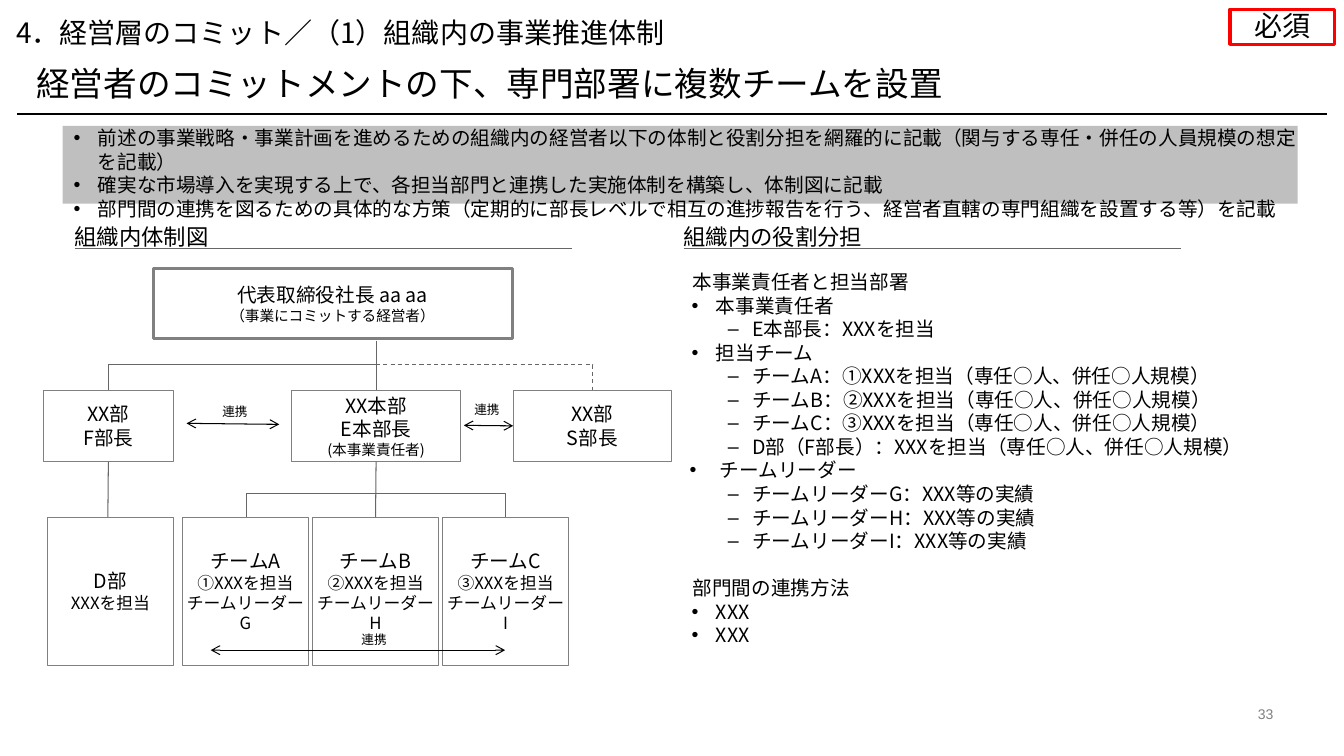
from lxml import etree
from pptx import Presentation
from pptx.dml.color import RGBColor
from pptx.enum.dml import MSO_LINE
from pptx.enum.shapes import MSO_CONNECTOR, MSO_SHAPE
from pptx.enum.text import MSO_ANCHOR, PP_ALIGN
from pptx.oxml.ns import qn
from pptx.util import Pt

SCALE = 9144  # EMU per px, 100 px to the inch
FONT = "Noto Sans CJK JP"
BLACK, GRAY, WIRE, RED, BAND = "000000", "808080", "666666", "FF0000", "BFBFBF"
RECTANGLE, STRAIGHT = MSO_SHAPE.RECTANGLE, MSO_CONNECTOR.STRAIGHT
LEFT, CENTER, RIGHT = PP_ALIGN.LEFT, PP_ALIGN.CENTER, PP_ALIGN.RIGHT
TOP, MIDDLE, BOTTOM = MSO_ANCHOR.TOP, MSO_ANCHOR.MIDDLE, MSO_ANCHOR.BOTTOM
DASH = MSO_LINE.DASH
TOP_SIDE, LEFT_SIDE, BOTTOM_SIDE = 0, 1, 2

# Paragraph styles: bullet, left margin and first-line indent in px
PLAIN = (None, 0, 0)
HEADING = (None, 12, 0)
DOT = ("•", 35, -24)
WIDE_DOT = ("•", 39, -30)
SUB = ("–", 71, -24)


def px(length):
    return round(length * SCALE)


def color(value):
    return RGBColor.from_string(value)


class SlideBuilder:
    def __init__(self, slide, font_name):
        self.shapes = slide.shapes
        self.font_name = font_name

    def fill_text(self, shape, lines, align=LEFT, anchor=TOP, inset=(0, 0),
                  font_color=BLACK, font_name=None, spacing=1.2):
        """Fill a shape with (text, size, style, space before) lines; the last two are optional."""
        frame = shape.text_frame
        frame.word_wrap = True
        frame.vertical_anchor = anchor
        frame.margin_left = frame.margin_right = px(inset[0])
        frame.margin_top = frame.margin_bottom = px(inset[1])
        for index, (text, size, *rest) in enumerate(lines):
            style, space_before = (*rest, *(PLAIN, 0)[len(rest):])
            paragraph = frame.add_paragraph() if index else frame.paragraphs[0]
            paragraph.text = text
            paragraph.alignment = align
            paragraph.line_spacing = Pt(round(size * spacing, 1))
            if space_before:
                paragraph.space_before = Pt(space_before)
            self.indent(paragraph, *style)
            self.set_font(paragraph, size, font_color, font_name or self.font_name)

    def indent(self, paragraph, bullet, margin, first_line):
        properties = paragraph._p.get_or_add_pPr()
        properties.set("marL", str(px(margin)))
        properties.set("indent", str(px(first_line)))
        if bullet:
            bullet_color = etree.SubElement(properties, qn("a:buClr"))
            etree.SubElement(bullet_color, qn("a:srgbClr"), val=BLACK)
            etree.SubElement(properties, qn("a:buFont"), typeface="Arial")
            etree.SubElement(properties, qn("a:buChar"), char=bullet)

    def set_font(self, paragraph, size, font_color, name):
        """Set the font for Latin and East Asian characters alike."""
        font = paragraph.font
        font.size = Pt(size)
        font.color.rgb = color(font_color)
        font.name = name
        defaults = paragraph._p.pPr.find(qn("a:defRPr"))
        etree.SubElement(defaults, qn("a:ea"), typeface=name)

    def text(self, left, top, width, height, lines, **layout):
        box = self.shapes.add_textbox(px(left), px(top), px(width), px(height))
        self.fill_text(box, lines, **layout)

    def box(self, left, top, width, height, lines, line=GRAY, weight=0.75, fill=None, **layout):
        shape = self.shapes.add_shape(RECTANGLE, px(left), px(top), px(width), px(height))
        shape.shadow.inherit = False
        if fill:
            shape.fill.solid()
            shape.fill.fore_color.rgb = color(fill)
        else:
            shape.fill.background()
        if line:
            self.stroke(shape, line, weight)
        else:
            shape.line.fill.background()
        self.fill_text(shape, lines, **layout)
        return shape

    def stroke(self, shape, line, weight, dash=None):
        shape.line.color.rgb = color(line)
        shape.line.width = Pt(weight)
        if dash:
            shape.line.dash_style = dash

    def line(self, x1, y1, x2, y2, line=WIRE, weight=0.75, arrows=False, begin=None, end=None):
        """Draw a straight line; begin and end are (shape, side) pairs to join."""
        connector = self.shapes.add_connector(STRAIGHT, px(x1), px(y1), px(x2), px(y2))
        if begin:
            connector.begin_connect(*begin)
        if end:
            connector.end_connect(*end)
        self.stroke(connector, line, weight)
        properties = connector._element.spPr
        if arrows:
            for tag in ("a:headEnd", "a:tailEnd"):
                etree.SubElement(properties.find(qn("a:ln")), qn(tag), type="arrow")
        etree.SubElement(properties, qn("a:effectLst"))

    def elbow(self, start, corner, end, dash=None):
        builder = self.shapes.build_freeform(*start, scale=SCALE)
        builder.add_line_segments([corner, end], close=False)
        shape = builder.convert_to_shape()
        shape.shadow.inherit = False
        shape.fill.background()
        self.stroke(shape, WIRE, 0.75, dash)

    def section(self, left, title):
        self.text(left, 216, 493, 32, [(title, 16)], anchor=BOTTOM)
        self.line(left, 247, left + 493, 247)

    def cooperation(self, left, top):
        self.text(left, top, 66, 18, [("連携", 9)], align=CENTER, anchor=MIDDLE, inset=(10, 5))


def add_header(builder):
    builder.text(16, 19, 1196, 30, [("4．経営層のコミット／（1）組織内の事業推進体制", 20)], spacing=1.08)
    builder.text(36, 66, 1230, 36, [("経営者のコミットメントの下、専門部署に複数チームを設置", 24)], spacing=1.08)
    builder.line(17, 113, 1316, 113, line=BLACK, weight=1)
    builder.box(1220, 9, 104, 35, [("必須", 20)], line=RED, weight=2.25,
                align=CENTER, anchor=MIDDLE, spacing=1.08)
    guidance = (
        "前述の事業戦略・事業計画を進めるための組織内の経営者以下の体制と役割分担を網羅的に記載（関与する専任・併任の人員規模の想定を記載）",
        "確実な市場導入を実現する上で、各担当部門と連携した実施体制を構築し、体制図に記載",
        "部門間の連携を図るための具体的な方策（定期的に部長レベルで相互の進捗報告を行う、経営者直轄の専門組織を設置する等）を記載",
    )
    builder.box(62, 125, 1225, 77, [(text, 14, DOT) for text in guidance], line=None, fill=BAND)


def add_organization(builder):
    builder.section(74, "組織内体制図")
    centered = {"align": CENTER, "anchor": MIDDLE}
    office = {**centered, "inset": (10, 10)}
    team = {**centered, "inset": (4, 4)}
    builder.box(152, 266, 356, 70, [("代表取締役社長 aa aa", 14), ("（事業にコミットする経営者）", 10.5)],
                weight=2.25, **office)
    division_f = builder.box(43, 387, 129, 71, [("XX部", 14), ("F部長", 14)], **office)
    division_e = builder.box(289, 387, 168, 71, [("XX本部", 14), ("E本部長", 14), ("(本事業責任者)", 10.5)],
                             weight=0.5, **office)
    division_s = builder.box(509, 387, 157, 71, [("XX部", 14), ("S部長", 14)], weight=0.5, **office)
    builder.box(47, 513, 125, 147, [("D部", 14), ("XXXを担当", 12)], **team)
    teams = [
        builder.box(181 + 129 * index, 513, 125, 147,
                    [(f"チーム{name}", 14), (f"{number}XXXを担当", 12), (f"チームリーダー{leader}", 12)], **team)
        for index, (name, number, leader) in enumerate(zip("ABC", "①②③", "GHI"))
    ]

    builder.line(373, 338, 373, 387, end=(division_e, TOP_SIDE))
    builder.elbow((373, 362), (108, 362), (108, 387))
    builder.elbow((373, 362), (588, 362), (588, 387), dash=DASH)
    builder.line(107, 458, 107, 513, begin=(division_f, BOTTOM_SIDE))
    builder.line(373, 458, 373, 513, begin=(division_e, BOTTOM_SIDE), end=(teams[1], TOP_SIDE))
    for center in (244, 501):
        builder.elbow((373, 490), (center, 490), (center, 513))

    builder.line(185, 420, 277, 421, line=BLACK, arrows=True)
    builder.line(460, 422, 509, 422, line=BLACK, arrows=True, end=(division_s, LEFT_SIDE))
    builder.line(209, 645, 501, 645, line=BLACK, arrows=True)
    for left, top in ((200, 399), (450, 397), (338, 625)):
        builder.cooperation(left, top)


def add_roles(builder):
    builder.section(678, "組織内の役割分担")
    scale_note = "（専任○人、併任○人規模）"
    roles = [
        ("本事業責任者と担当部署", 14, HEADING),
        ("本事業責任者", 14, DOT),
        ("E本部長：XXXを担当", 14, SUB),
        ("担当チーム", 14, DOT),
        *[(f"チーム{name}：{number}XXXを担当{scale_note}", 14, SUB) for name, number in zip("ABC", "①②③")],
        (f"D部（F部長）：XXXを担当{scale_note}", 14, SUB),
        ("チームリーダー", 14, WIDE_DOT),
        *[(f"チームリーダー{leader}：XXX等の実績", 14, SUB) for leader in "GHI"],
        ("部門間の連携方法", 14, HEADING, 16.8),
        *[("XXX", 14, DOT)] * 2,
    ]
    builder.text(675, 268, 610, 444, roles)


def main():
    presentation = Presentation()
    presentation.slide_width, presentation.slide_height = px(1333), px(750)
    slide = presentation.slides.add_slide(presentation.slide_layouts[6])
    builder = SlideBuilder(slide, FONT)
    add_header(builder)
    add_organization(builder)
    add_roles(builder)
    builder.text(1221, 700, 42, 17, [("33", 10)], align=RIGHT, anchor=BOTTOM,
                 font_color=GRAY, font_name="Arial")
    presentation.save("out.pptx")


if __name__ == "__main__":
    main()
